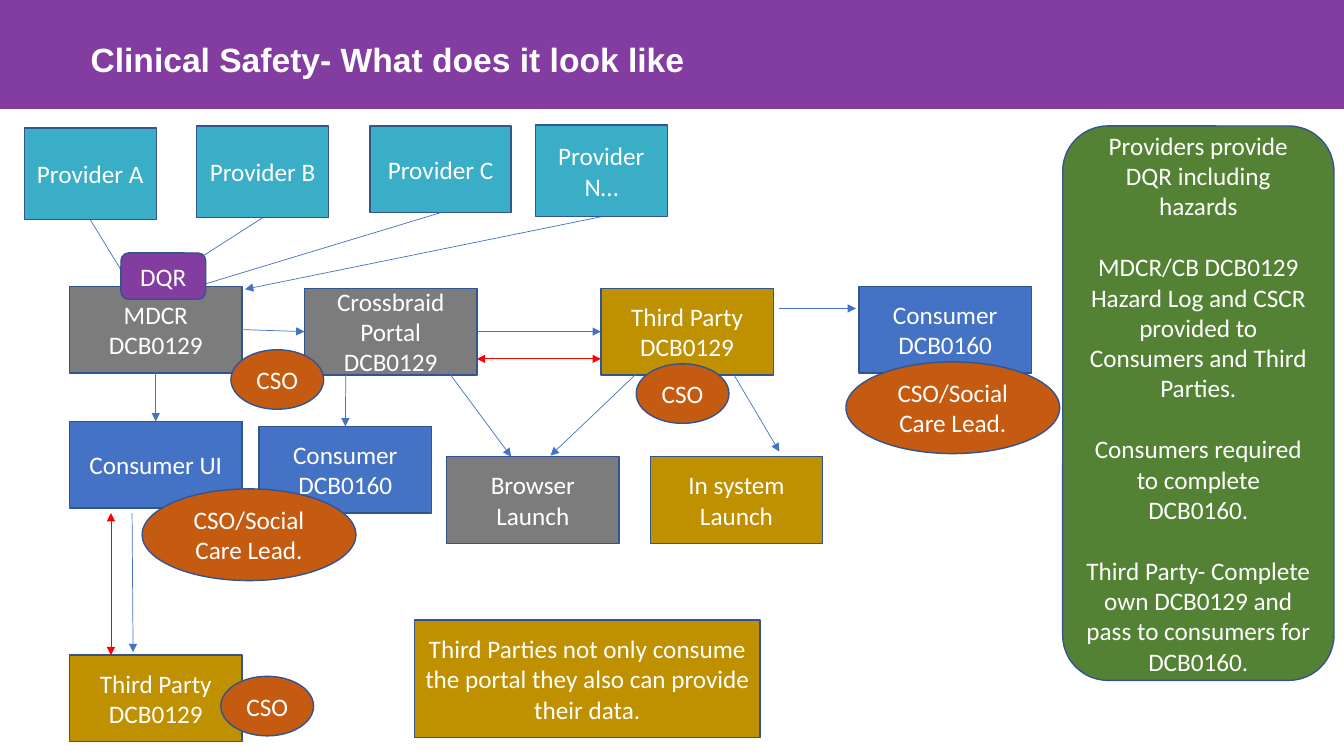
"""Build the clinical safety flow slide."""
import lxml.etree
import pptx
import pptx.dml.color
import pptx.enum.shapes
import pptx.enum.text
import pptx.oxml.ns
import pptx.util

PX = 9144
theme = {
    "purple": "833C9F", "grey": "7C7C7C", "blue": "4472C4", "gold": "BF9000",
    "teal": "3AADC7", "green": "548235", "orange": "C55A11", "red": "FF0000",
    "edge": "325491", "white": "FFFFFF",
    "body": "Calibri", "head": "Arial", "text": 18, "title": 24,
}
kinds = pptx.enum.shapes.MSO_SHAPE
qn = pptx.oxml.ns.qn


def tint(name):
    return pptx.dml.color.RGBColor.from_string(theme[name])


def add_box(kind, fill, left, top, width, height, words, gap=0):
    box = slide.shapes.add_shape(kind, left * PX, top * PX, width * PX, height * PX)
    box.shadow.inherit = False
    box.fill.solid()
    box.fill.fore_color.rgb = tint(fill)
    box.line.color.rgb = tint("edge")
    box.line.width = pptx.util.Pt(1)
    frame = box.text_frame
    frame.word_wrap = True
    frame.vertical_anchor = pptx.enum.text.MSO_ANCHOR.MIDDLE
    frame.text = words
    for order, para in enumerate(frame.paragraphs):
        para.alignment = pptx.enum.text.PP_ALIGN.CENTER
        para.space_before = pptx.util.Pt(gap if order else 0)
        para.font.name = theme["body"]
        para.font.size = pptx.util.Pt(theme["text"])
        para.font.color.rgb = tint("white")
    return box


deck = pptx.Presentation()
deck.slide_width = pptx.util.Inches(13.33)
deck.slide_height = pptx.util.Inches(7.5)
slide = deck.slides.add_slide(deck.slide_layouts[6])

band = slide.shapes.add_shape(kinds.RECTANGLE, 0, 0, deck.slide_width, 108 * PX)
band.shadow.inherit = False
band.fill.solid()
band.fill.fore_color.rgb = tint("purple")
band.line.fill.background()

title = slide.shapes.add_textbox(80 * PX, 34 * PX, 1129 * PX, 50 * PX)
title.text_frame.word_wrap = True
title.text_frame.text = "Clinical Safety- What does it look like"
para = title.text_frame.paragraphs[0]
para.font.name = theme["head"]
para.font.size = pptx.util.Pt(theme["title"])
para.font.bold = True
para.font.color.rgb = tint("white")

boxes = {}
for key, left, top, width, height, words in [
    ("A", 24, 127, 131, 91, "Provider A"),
    ("B", 195, 125, 131, 91, "Provider B"),
    ("C", 367, 125, 140, 86, "Provider C"),
    ("N", 531, 124, 131, 91, "Provider\nN…"),
]:
    boxes[key] = add_box(kinds.RECTANGLE, "teal", left, top, width, height, words)

for key, fill, left, top, words in [
    ("record", "grey", 69, 284, "MDCR DCB0129"),
    ("portal", "grey", 302, 286, "Crossbraid Portal DCB0129"),
    ("third", "gold", 596, 286, "Third Party DCB0129"),
    ("buyer", "blue", 852, 284, "Consumer DCB0160"),
    ("screen", "blue", 69, 418, "Consumer UI"),
    ("user", "blue", 257, 423, "Consumer DCB0160"),
    ("browser", "grey", 443, 453, "Browser Launch"),
    ("system", "gold", 645, 453, "In system Launch"),
    ("lower", "gold", 69, 650, "Third Party DCB0129"),
]:
    boxes[key] = add_box(kinds.RECTANGLE, fill, left, top, 171, 86, words)

add_box(kinds.RECTANGLE, "gold", 411, 615, 343, 117,
        "Third Parties not only consume the portal they also can provide their data.")
add_box(kinds.ROUNDED_RECTANGLE, "green", 1054, 125, 269, 550, "\n".join([
    "Providers provide DQR including hazards",
    "MDCR/CB DCB0129 Hazard Log and CSCR provided to Consumers and Third Parties.",
    "Consumers required to complete DCB0160.",
    "Third Party- Complete own DCB0129 and pass to consumers for DCB0160.",
]), gap=22)

for start, end, hue in [
    (("A", 2), (130, 284), "blue"),
    (("B", 2), ("record", 0), "blue"),
    (("C", 2), (196, 284), "blue"),
    (("N", 2), (243, 287), "blue"),
    (("record", 3), ("portal", 1), "blue"),
    (("record", 2), ("screen", 0), "blue"),
    (("portal", 3), ("third", 1), "blue"),
    ((473, 356), (596, 356), "red"),
    ((773, 306), (849, 306), "blue"),
    ((343, 372), ("user", 0), "blue"),
    ((444, 368), (507, 453), "blue"),
    ((631, 371), (546, 452), "blue"),
    ((728, 372), (773, 448), "blue"),
    ((131, 509), (132, 647), "blue"),
    ((110, 509), (110, 650), "red"),
]:
    spots = [(0, 0) if spot[0] in boxes else spot for spot in (start, end)]
    arrow = slide.shapes.add_connector(
        pptx.enum.shapes.MSO_CONNECTOR.STRAIGHT,
        *[value * PX for spot in spots for value in spot])
    if start[0] in boxes:
        arrow.begin_connect(boxes[start[0]], start[1])
    if end[0] in boxes:
        arrow.end_connect(boxes[end[0]], end[1])
    arrow.line.color.rgb = tint(hue)
    arrow.line.width = pptx.util.Pt(0.5)
    props = arrow.line._get_or_add_ln()
    for tip in ["headEnd", "tailEnd"] if hue == "red" else ["tailEnd"]:
        lxml.etree.SubElement(props, qn("a:" + tip), type="triangle")
    lxml.etree.SubElement(arrow._element.spPr, qn("a:effectLst"))

for left, top in [(631, 361), (229, 347), (219, 671)]:
    add_box(kinds.OVAL, "orange", left, top, 92, 59, "CSO")
for left, top in [(839, 359), (141, 485)]:
    add_box(kinds.OVAL, "orange", left, top, 212, 91, "CSO/Social Care Lead.")
add_box(kinds.ROUNDED_RECTANGLE, "purple", 120, 251, 84, 46, "DQR")

deck.save("out.pptx")
